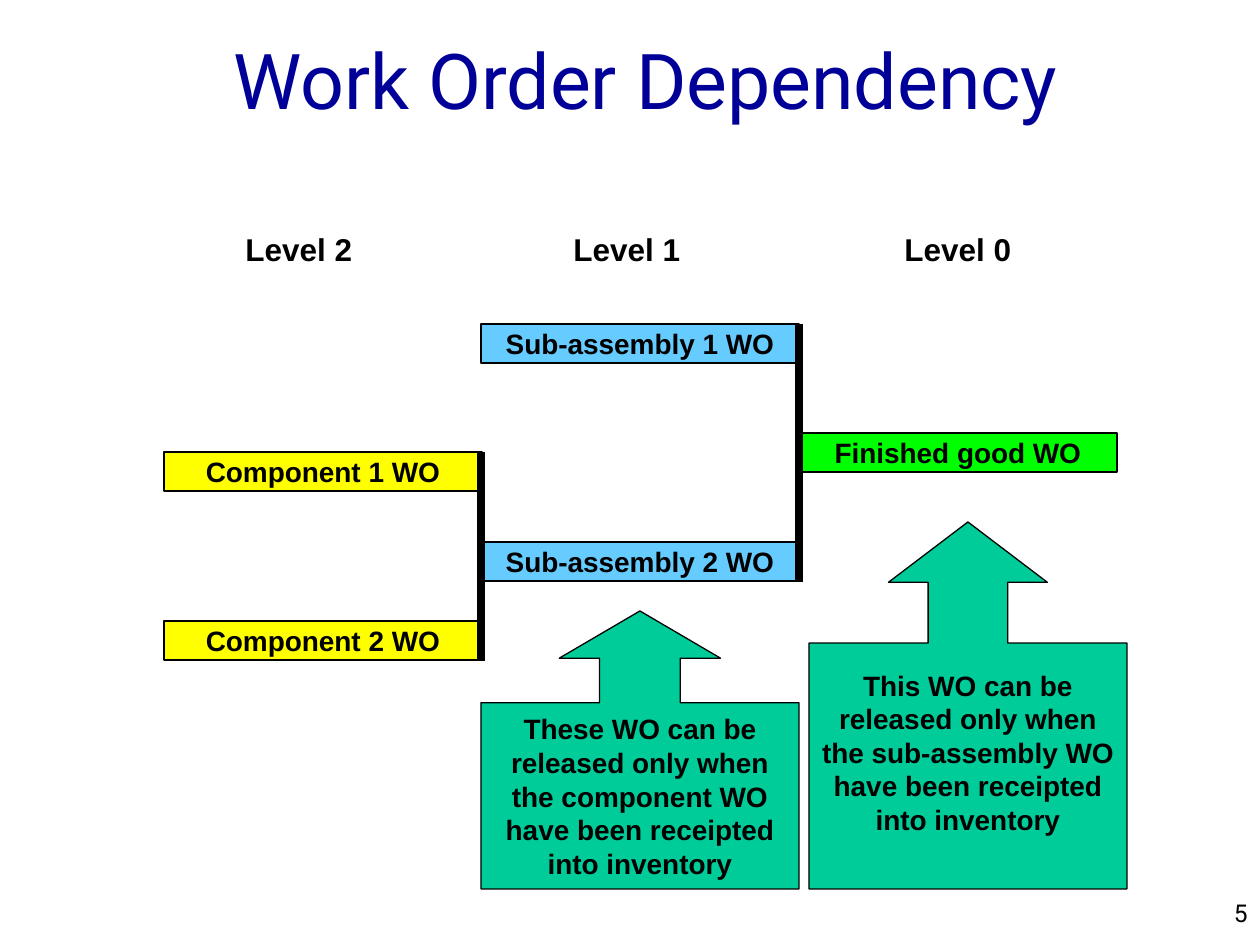
from lxml.etree import SubElement
from pptx import Presentation
from pptx.dml.color import RGBColor
from pptx.enum.shapes import MSO_CONNECTOR, MSO_SHAPE
from pptx.enum.text import MSO_ANCHOR, MSO_AUTO_SIZE, PP_ALIGN
from pptx.oxml.ns import qn
from pptx.util import Pt

PX = 914400 / 126
COLORS = {
    "black": "000000",
    "title": "000099",
    "component": "FFFF00",
    "assembly": "66CCFF",
    "finished": "00FF00",
    "callout": "00CC99",
}
COLUMNS = (164, 481, 799)
BOX_W, BOX_H = 318, 39


def px(n):
    return round(n * PX)


def rgb(name):
    return RGBColor.from_string(COLORS[name])


class SlideBuilder:
    body_font = "Arial"
    head_font = "Roboto"

    def __init__(self, slide):
        self.slide = slide

    def set_text(self, sp, text, size, font, color="black", bold=False,
                 align=PP_ALIGN.LEFT, anchor=MSO_ANCHOR.TOP, wrap=True):
        tf = sp.text_frame
        tf.word_wrap = wrap
        tf.vertical_anchor = anchor
        p = tf.paragraphs[0]
        p.text = text
        p.alignment = align
        p.font.name = font
        p.font.size = Pt(size)
        p.font.bold = bold
        p.font.color.rgb = rgb(color)
        return tf

    def text(self, x, y, w, h, text, size, font, **style):
        sp = self.slide.shapes.add_textbox(px(x), px(y), px(w), px(h))
        return self.set_text(sp, text, size, font, **style)

    def level(self, x, text):
        tf = self.text(x, 224, 132, 50, text, 18, self.body_font,
                       bold=True, wrap=False)
        tf.auto_size = MSO_AUTO_SIZE.SHAPE_TO_FIT_TEXT

    def shape(self, kind, x, y, w, h, text, fill, wrap):
        sp = self.slide.shapes.add_shape(kind, px(x), px(y), px(w), px(h))
        sp.shadow.inherit = False
        sp.fill.solid()
        sp.fill.fore_color.rgb = rgb(fill)
        sp.line.color.rgb = rgb("black")
        sp.line.width = Pt(0.75)
        self.set_text(sp, text, 16, self.body_font, bold=True, wrap=wrap,
                      align=PP_ALIGN.CENTER, anchor=MSO_ANCHOR.MIDDLE)
        return sp

    def order(self, column, y, text, fill):
        self.shape(MSO_SHAPE.RECTANGLE, COLUMNS[column], y, BOX_W, BOX_H,
                   text, fill, False)

    def callout(self, x, y, h, text, adjustments, bottom_inset):
        sp = self.shape(MSO_SHAPE.UP_ARROW_CALLOUT, x, y, BOX_W, h,
                        text, "callout", True)
        for i, value in enumerate(adjustments):
            sp.adjustments[i] = value
        sp.text_frame.margin_bottom = px(bottom_inset)

    def joint(self, x, top, bottom):
        line = self.slide.shapes.add_connector(
            MSO_CONNECTOR.STRAIGHT, px(x), px(top), px(x), px(bottom))
        line.line.color.rgb = rgb("black")
        line.line.width = Pt(4.5)
        SubElement(line._element.spPr, qn("a:effectLst"))


def main():
    prs = Presentation()
    prs.slide_width, prs.slide_height = px(1260), px(945)
    s = SlideBuilder(prs.slides.add_slide(prs.slide_layouts[6]))

    s.text(998, 892, 262, 32, "5", 14, s.head_font, align=PP_ALIGN.RIGHT)
    s.text(0, 0, 1071, 158, "Work Order Dependency", 44, s.head_font,
           color="title", align=PP_ALIGN.RIGHT, anchor=MSO_ANCHOR.MIDDLE)

    for x, text in ((892, "Level 0"), (561, "Level 1"), (233, "Level 2")):
        s.level(x, text)

    for column, y, text, fill in (
        (2, 433, "Finished good WO", "finished"),
        (1, 542, "Sub-assembly 2 WO", "assembly"),
        (0, 621, "Component 2 WO", "component"),
        (1, 324, "Sub-assembly 1 WO", "assembly"),
        (0, 452, "Component 1 WO", "component"),
    ):
        s.order(column, y, text, fill)

    s.joint(COLUMNS[1], 452, 661)
    s.joint(COLUMNS[2], 324, 582)

    s.callout(COLUMNS[1], 611, 278,
              "These WO can be released only when the component WO "
              "have been receipted into inventory",
              (0.29, 0.29, 0.17, 0.67), 6)
    s.callout(809, 522, 367,
              "This WO can be released only when the sub-assembly WO "
              "have been receipted into inventory",
              (0.25, 0.25, 0.19, 0.67), 34)

    prs.save("out.pptx")


if __name__ == "__main__":
    main()
